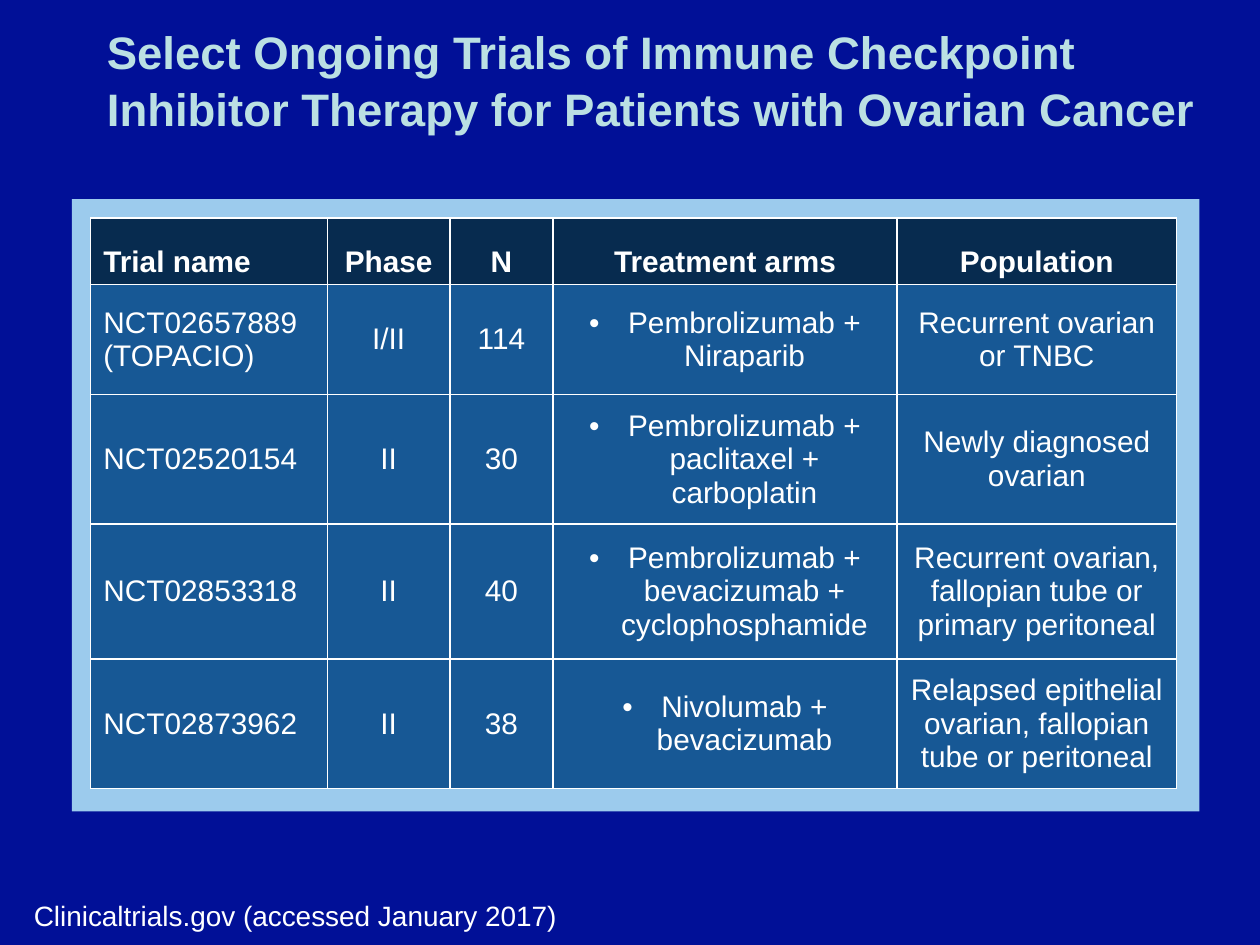
from lxml import etree
from pptx import Presentation
from pptx.dml.color import RGBColor
from pptx.enum import shapes, text
from pptx.oxml import ns
from pptx.util import Inches, Pt

WHITE = "FFFFFF"
CENTER = text.PP_ALIGN.CENTER
MIDDLE = text.MSO_ANCHOR.MIDDLE


def color(value):
    return RGBColor.from_string(value)


def style(para, size, tint=WHITE, bold=False):
    formats = {"name": "Arial", "size": Pt(size), "bold": bold}
    for key, value in formats.items():
        setattr(para.font, key, value)
    para.font.color.rgb = color(tint)


deck = Presentation()
deck.slide_width, deck.slide_height = Inches(10), Inches(7.5)
page = deck.slides.add_slide(deck.slide_layouts[6])
page.background.fill.solid()
page.background.fill.fore_color.rgb = color("011097")

# Panel behind the table
panel = page.shapes.add_shape(shapes.MSO_SHAPE.RECTANGLE, Inches(0.57),
                              Inches(1.58), Inches(8.95), Inches(4.86))
panel.shadow.inherit = False
panel.fill.solid()
panel.fill.fore_color.rgb = color("9CCBED")
panel.line.fill.background()

# Title and source note
captions = [
    ("Select Ongoing Trials of Immune Checkpoint Inhibitor Therapy "
     "for Patients with Ovarian Cancer",
     (0.75, 0, 9.12, 1.25), 26, "BBE0E3", True, MIDDLE, 1.05),
    ("Clinicaltrials.gov (accessed January 2017)",
     (0.17, 7.08, 9.46, 0.37), 16, WHITE, False, text.MSO_ANCHOR.TOP, 1.0),
]
for words, place, size, tint, bold, anchor, spacing in captions:
    box = page.shapes.add_textbox(*[Inches(length) for length in place])
    box.text_frame.word_wrap = True
    box.text_frame.vertical_anchor = anchor
    para = box.text_frame.paragraphs[0]
    para.text = words
    para.line_spacing = spacing
    style(para, size, tint, bold)

# Trials table
widths = [1.88, 0.97, 0.82, 2.73, 2.22]
heights = [0.53, 0.87, 1.03, 1.07, 1.03]
ARMS = 3
rows = [
    ["Trial name", "Phase", "N", "Treatment arms", "Population"],
    ["NCT02657889\n(TOPACIO)", "I/II", "114", "Pembrolizumab + Niraparib",
     "Recurrent ovarian or TNBC"],
    ["NCT02520154", "II", "30", "Pembrolizumab + paclitaxel + carboplatin",
     "Newly diagnosed ovarian"],
    ["NCT02853318", "II", "40",
     "Pembrolizumab + bevacizumab + cyclophosphamide",
     "Recurrent ovarian, fallopian tube or primary peritoneal"],
    ["NCT02873962", "II", "38", "Nivolumab + bevacizumab",
     "Relapsed epithelial ovarian, fallopian tube or peritoneal"],
]
table = page.shapes.add_table(len(rows), len(widths), Inches(0.72),
                              Inches(1.73), Inches(sum(widths)),
                              Inches(sum(heights))).table
for column, width in zip(table.columns, widths):
    column.width = Inches(width)
for row, height in zip(table.rows, heights):
    row.height = Inches(height)

for r, row in enumerate(rows):
    header = r == 0
    for c, words in enumerate(row):
        cell = table.cell(r, c)
        cell.text = words
        cell.margin_left = cell.margin_right = Inches(0.1)
        cell.vertical_anchor = text.MSO_ANCHOR.BOTTOM if header else MIDDLE
        properties = cell._tc.get_or_add_tcPr()
        for side in ("lnL", "lnR", "lnT", "lnB"):
            border = etree.SubElement(properties, ns.qn(f"a:{side}"),
                                      w=str(Pt(1)))
            solid = etree.SubElement(border, ns.qn("a:solidFill"))
            etree.SubElement(solid, ns.qn("a:srgbClr"), val=WHITE)
        cell.fill.solid()
        cell.fill.fore_color.rgb = color("072B4F" if header else "175895")
        for para in cell.text_frame.paragraphs:
            if c:
                para.alignment = CENTER
            if c == ARMS and not header:
                layout = para._p.get_or_add_pPr()
                layout.set("marL", str(Inches(0.31)))
                layout.set("indent", str(Inches(-0.31)))
                etree.SubElement(layout, ns.qn("a:buFont"), typeface="Arial")
                etree.SubElement(layout, ns.qn("a:buChar"), char="•")
            style(para, 17, bold=header)

deck.save("out.pptx")
